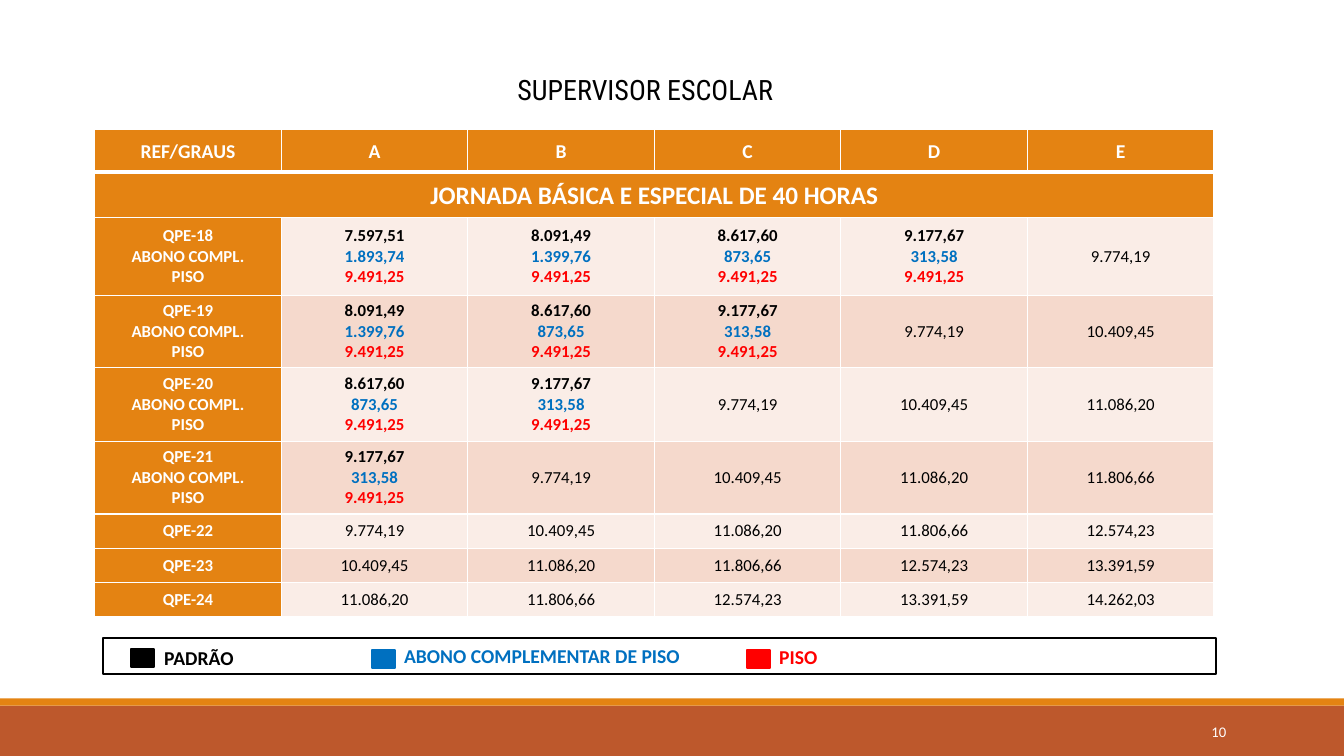
from lxml.etree import SubElement
from pptx import Presentation
from pptx.dml.color import RGBColor
from pptx.enum.shapes import MSO_SHAPE
from pptx.enum.text import MSO_ANCHOR, PP_ALIGN
from pptx.oxml.ns import qn
from pptx.util import Inches, Pt

COLORS = {
    "white": "FFFFFF",
    "black": "000000",
    "blue": "0070C0",
    "red": "FF0000",
    "orange": "E48312",
    "rust": "BD582C",
    "light": "FAEDE7",
    "dark": "F5D9CC",
}
GRADES = ["A", "B", "C", "D", "E"]
FIRST_REFERENCE = 18
REFERENCE_COUNT = 7
SALARY_SCALE = [
    "7.597,51", "8.091,49", "8.617,60", "9.177,67", "9.774,19", "10.409,45",
    "11.086,20", "11.806,66", "12.574,23", "13.391,59", "14.262,03",
]
SUPPLEMENTS = ["1.893,74", "1.399,76", "873,65", "313,58"]
SALARY_FLOOR = "9.491,25"
COLUMN_WIDTH = 1.85
ROW_HEIGHTS = [0.43, 0.45, 0.77, 0.72, 0.73, 0.72, 0.34, 0.34, 0.34]
LEGEND = [
    ("PADRÃO", "black", 1.3, 6.44, 1.53, 6.36, 1.19),
    ("ABONO COMPLEMENTAR DE PISO", "blue", 3.69, 6.45, 3.91, 6.34, 3.36),
    ("PISO", "red", 7.41, 6.45, 7.63, 6.35, 1.0),
]


def rgb(color):
    return RGBColor.from_string(COLORS[color])


def write_lines(text_frame, lines, size, bold=False, font="Calibri",
                align=PP_ALIGN.CENTER, spacing=1.0):
    for index, (text, color) in enumerate(lines):
        paragraph = text_frame.paragraphs[0] if index == 0 else text_frame.add_paragraph()
        paragraph.alignment = align
        paragraph.line_spacing = spacing
        run = paragraph.add_run()
        run.text = text
        run.font.name = font
        run.font.size = Pt(size)
        run.font.bold = bold
        run.font.color.rgb = rgb(color)


def add_rectangle(slide, left, top, width, height, fill, line=None):
    shape = slide.shapes.add_shape(MSO_SHAPE.RECTANGLE, Inches(left), Inches(top),
                                   Inches(width), Inches(height))
    shape.shadow.inherit = False
    shape.fill.solid()
    shape.fill.fore_color.rgb = rgb(fill)
    if line:
        shape.line.color.rgb = rgb(line)
        shape.line.width = Pt(1.25)
    else:
        shape.line.fill.background()


def add_label(slide, left, top, width, height, text, color, size, bold=False,
              align=PP_ALIGN.LEFT, anchor=MSO_ANCHOR.TOP):
    box = slide.shapes.add_textbox(Inches(left), Inches(top), Inches(width), Inches(height))
    box.text_frame.word_wrap = True
    box.text_frame.vertical_anchor = anchor
    write_lines(box.text_frame, [(text, color)], size, bold, align=align)


def set_title(slide, text):
    title = slide.shapes.title
    title.left, title.top = Inches(0.99), Inches(0.65)
    title.width, title.height = Inches(10.82), Inches(0.43)
    title.text_frame.vertical_anchor = MSO_ANCHOR.TOP
    write_lines(title.text_frame, [(text, "black")], 20, font="Roboto Condensed", spacing=1.07)


def set_borders(cell, top=1, bottom=1):
    properties = cell._tc.get_or_add_tcPr()
    for side, width in (("L", 1), ("R", 1), ("T", top), ("B", bottom)):
        line = SubElement(properties, qn(f"a:ln{side}"), w=str(Pt(width)))
        fill = SubElement(line, qn("a:solidFill"))
        SubElement(fill, qn("a:srgbClr"), val=COLORS["white"])


def fill_cell(cell, lines, fill, size=12, bold=True, spacing=1.0, top=1, bottom=1):
    set_borders(cell, top, bottom)
    cell.fill.solid()
    cell.fill.fore_color.rgb = rgb(fill)
    cell.vertical_anchor = MSO_ANCHOR.MIDDLE
    cell.margin_left = cell.margin_right = Inches(0.07)
    cell.margin_top = cell.margin_bottom = 0
    write_lines(cell.text_frame, lines, size, bold, spacing=spacing)


def salary_lines(step):
    lines = [(SALARY_SCALE[step], "black")]
    if step < len(SUPPLEMENTS):
        lines += [(SUPPLEMENTS[step], "blue"), (SALARY_FLOOR, "red")]
    return lines


def add_salary_table(slide):
    column_count = len(GRADES) + 1
    table = slide.shapes.add_table(
        len(ROW_HEIGHTS), column_count, Inches(0.94), Inches(1.28),
        Inches(COLUMN_WIDTH * column_count), Inches(sum(ROW_HEIGHTS))).table
    for column in table.columns:
        column.width = Inches(COLUMN_WIDTH)
    for row, height in zip(table.rows, ROW_HEIGHTS):
        row.height = Inches(height)

    for column, heading in enumerate(["REF/GRAUS"] + GRADES):
        fill_cell(table.cell(0, column), [(heading, "white")], "orange", 14,
                  spacing=1.07, bottom=3)
    table.cell(1, 0).merge(table.cell(1, column_count - 1))
    fill_cell(table.cell(1, 0), [("JORNADA BÁSICA E ESPECIAL DE 40 HORAS", "white")],
              "orange", 18, spacing=1.07, top=3)

    for index in range(REFERENCE_COUNT):
        row = index + 2
        labels = [f"QPE-{FIRST_REFERENCE + index}"]
        if index < len(SUPPLEMENTS):
            labels += ["ABONO COMPL.", "PISO"]
        fill_cell(table.cell(row, 0), [(label, "white") for label in labels], "orange")
        band = "dark" if index % 2 else "light"
        for grade in range(len(GRADES)):
            lines = salary_lines(index + grade)
            fill_cell(table.cell(row, grade + 1), lines, band, bold=len(lines) > 1)


def add_legend(slide):
    add_rectangle(slide, 1.02, 6.33, 11.04, 0.36, "white", "black")
    for text, color, swatch_left, swatch_top, left, top, width in LEGEND:
        add_rectangle(slide, swatch_left, swatch_top, 0.23, 0.18, color, color)
        add_label(slide, left, top, width, 0.34, text, color, 14, bold=True)


def add_footer(slide):
    add_rectangle(slide, 0, 7, 13.33, 0.5, "rust")
    add_rectangle(slide, 0, 6.93, 13.33, 0.07, "orange")
    add_label(slide, 10.83, 7.06, 1.43, 0.4, "10", "white", 10.5,
              align=PP_ALIGN.RIGHT, anchor=MSO_ANCHOR.MIDDLE)


def main():
    presentation = Presentation()
    presentation.slide_width = Inches(13.33)
    presentation.slide_height = Inches(7.5)
    slide = presentation.slides.add_slide(presentation.slide_layouts[5])
    add_footer(slide)
    set_title(slide, "SUPERVISOR ESCOLAR")
    add_salary_table(slide)
    add_legend(slide)
    presentation.save("out.pptx")


if __name__ == "__main__":
    main()
